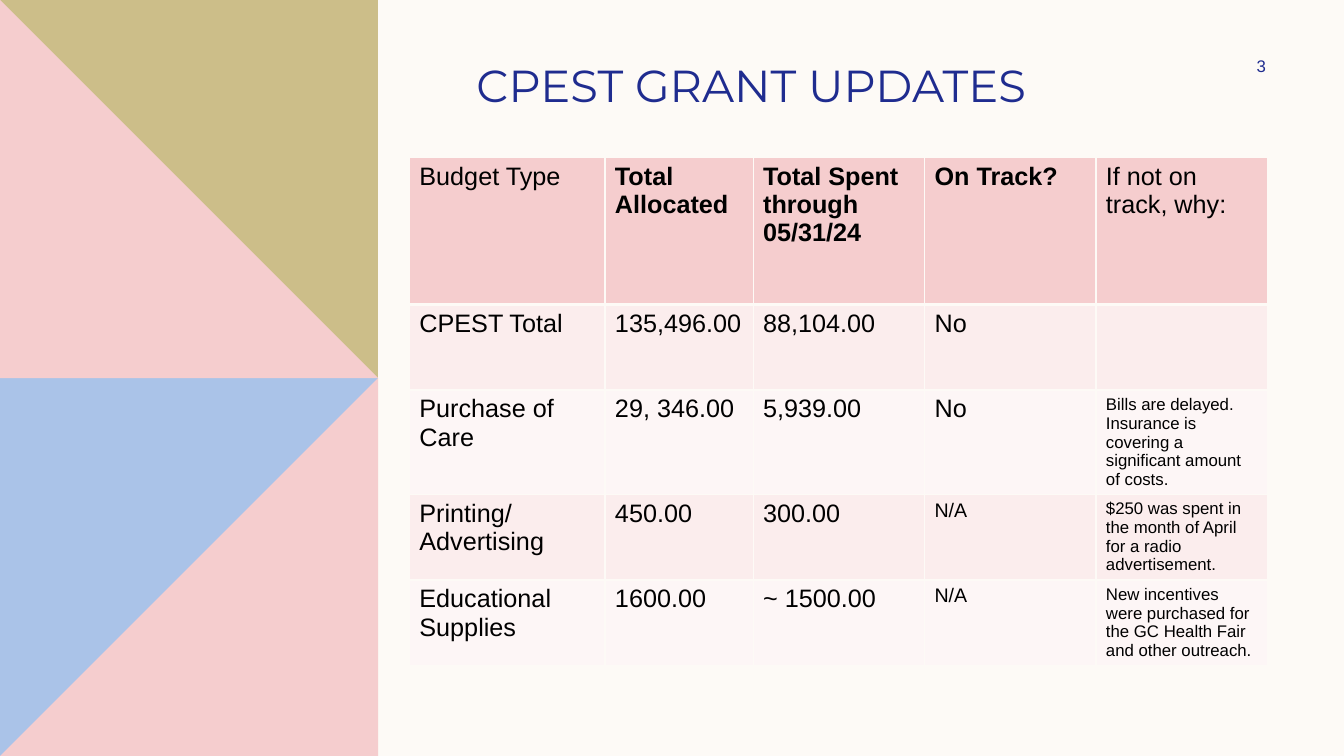
from lxml import etree
from pptx import Presentation
from pptx import util as u
from pptx.dml.color import RGBColor
from pptx.enum import text
from pptx.oxml.ns import qn

WIDTH, HEIGHT = u.Inches(13.33), u.Inches(7.5)
SIDE = HEIGHT // 2  # side of each square in the left panel

COLORS = {
    "cream": "FDFAF6", "pink": "F5CDCE", "olive": "CCBE89", "blue": "AAC3E8",
    "navy": "1F2C8F", "black": "000000", "band_dark": "FBEDED", "band_light": "FDF6F6",
}

# Corners of the panel shapes, in squares from the top left of the slide
PANEL = [
    ("blue", [(0, 1), (1, 1), (1, 2), (0, 2)]),
    ("pink", [(1, 1), (1, 2), (0, 2)]),
    ("olive", [(0, 0), (1, 0), (1, 1), (0, 1)]),
    ("pink", [(0, 0), (1, 1), (0, 1)]),
]

COLUMN_WIDTHS = [1.94, 1.47, 1.7, 1.7, 1.7]
ROW_HEIGHTS = [1.46, 0.85, 0.85, 0.85, 0.85]
BUDGET = [
    ["Budget Type", "Total Allocated", "Total Spent through 05/31/24", "On Track?",
     "If not on track, why:"],
    ["CPEST Total", "135,496.00", "88,104.00", "No", ""],
    ["Purchase of Care", "29, 346.00", "5,939.00", "No",
     "Bills are delayed. Insurance is covering a significant amount of costs."],
    ["Printing/\nAdvertising", "450.00", "300.00", "N/A",
     "$250 was spent in the month of April for a radio advertisement."],
    ["Educational Supplies", "1600.00", "~ 1500.00", "N/A",
     "New incentives were purchased for the GC Health Fair and other outreach."],
]


def rgb(name):
    return RGBColor.from_string(COLORS[name])


def format_text(tf, size, color, font="Arial", bold=False, align=text.PP_ALIGN.LEFT):
    for p in tf.paragraphs:
        p.alignment = align
        for r in p.runs:
            r.font.size, r.font.name, r.font.bold = u.Pt(size), font, bold
            r.font.color.rgb = rgb(color)


def place(sp, left, top, width, height):
    sp.left, sp.top = int(WIDTH * left), int(HEIGHT * top)
    sp.width, sp.height = int(WIDTH * width), int(HEIGHT * height)


def add_polygon(s, color, corners):
    builder = s.shapes.build_freeform(*corners[0], scale=SIDE)
    builder.add_line_segments(corners[1:], close=True)
    sp = builder.convert_to_shape()
    sp.shadow.inherit = False
    sp.fill.solid()
    sp.fill.fore_color.rgb = rgb(color)
    sp.line.fill.background()


def set_borders(cell, bottom):
    """Draw cream rules round a cell; bottom is the lower rule's width in points."""
    tc_pr = cell._tc.get_or_add_tcPr()
    for i, (side, width) in enumerate([("L", 1), ("R", 1), ("T", 1), ("B", bottom)]):
        ln = etree.Element(qn(f"a:ln{side}"), w=str(u.Pt(width)))
        fill = etree.SubElement(ln, qn("a:solidFill"))
        etree.SubElement(fill, qn("a:srgbClr"), val=COLORS["cream"])
        tc_pr.insert(i, ln)


def text_size(row, column):
    if row and column == 4:
        return 12
    return 14 if BUDGET[row][column] == "N/A" else 18


def add_budget_table(s):
    frame = s.shapes.add_table(len(BUDGET), len(BUDGET[0]), u.Inches(4.06), u.Inches(1.56),
                               u.Inches(sum(COLUMN_WIDTHS)), u.Inches(sum(ROW_HEIGHTS)))
    table = frame.table
    for column, width in zip(table.columns, COLUMN_WIDTHS):
        column.width = u.Inches(width)
    for i, height in enumerate(ROW_HEIGHTS):
        table.rows[i].height = u.Inches(height)
        band = "pink" if i == 0 else "band_dark" if i % 2 else "band_light"
        for j, words in enumerate(BUDGET[i]):
            cell = table.cell(i, j)
            cell.text_frame.text = words
            format_text(cell.text_frame, text_size(i, j), "black", bold=i == 0 and 0 < j < 4)
            cell.fill.solid()
            cell.fill.fore_color.rgb = rgb(band)
            set_borders(cell, bottom=1 if i else 3)


def set_title(s, words):
    title = s.shapes.title
    place(title, 0.347, 0.067, 0.562, 0.089)
    tf = title.text_frame
    tf.text = words
    tf.vertical_anchor = text.MSO_ANCHOR.MIDDLE
    format_text(tf, 32, "navy", font="Montserrat")


def add_page_number(s, number):
    sp = s.shapes.add_textbox(0, 0, 0, 0)
    place(sp, 0.898, 0.067, 0.081, 0.04)
    tf = sp.text_frame
    tf.word_wrap = True
    tf.text = number
    tf.vertical_anchor = text.MSO_ANCHOR.MIDDLE
    format_text(tf, 12, "navy", align=text.PP_ALIGN.CENTER)


def main():
    prs = Presentation()
    prs.slide_width, prs.slide_height = WIDTH, HEIGHT
    s = prs.slides.add_slide(prs.slide_layouts[5])
    s.background.fill.solid()
    s.background.fill.fore_color.rgb = rgb("cream")
    for color, corners in PANEL:
        add_polygon(s, color, corners)
    add_budget_table(s)
    set_title(s, "CPEST GRANT UPDATES")
    add_page_number(s, "3")
    prs.save("out.pptx")


if __name__ == "__main__":
    main()
